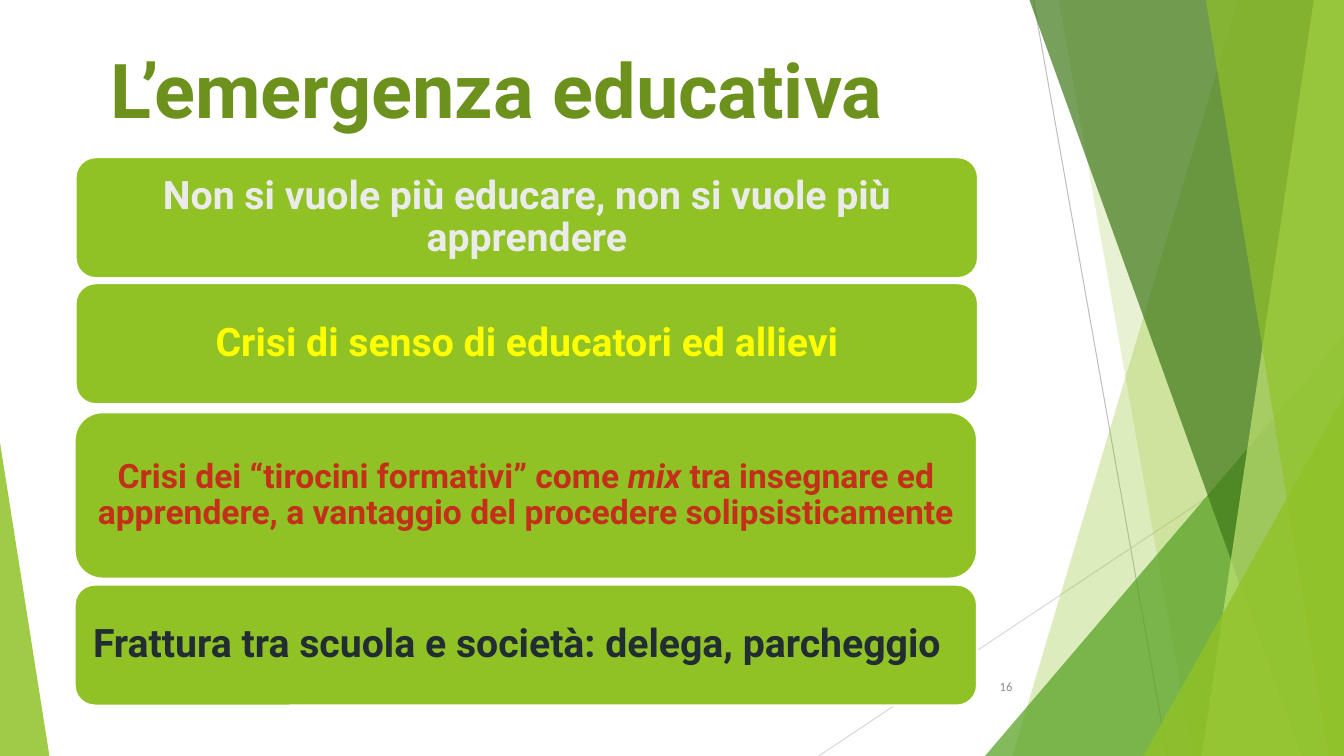
"""Build the slide "L'emergenza educativa" with faceted green decoration and four cards."""
from lxml import etree
from pptx import Presentation
from pptx.dml.color import RGBColor
from pptx.enum.shapes import MSO_CONNECTOR, MSO_SHAPE
from pptx.enum.text import MSO_ANCHOR, PP_ALIGN
from pptx.oxml.ns import qn
from pptx.util import Inches, Pt

LINE = MSO_CONNECTOR.STRAIGHT
TRIANGLE, CARD = MSO_SHAPE.ISOSCELES_TRIANGLE, MSO_SHAPE.ROUNDED_RECTANGLE
TOP, MIDDLE = MSO_ANCHOR.TOP, MSO_ANCHOR.MIDDLE
LEFT, CENTER, RIGHT = PP_ALIGN.LEFT, PP_ALIGN.CENTER, PP_ALIGN.RIGHT
W, H = 13.33, 7.5

THEME = {
    "green": "90C226", "leaf": "54A021", "forest": "3F7819", "lime": "C0E474",
    "title": "6C921D", "white": "FFFFFF", "pale": "EBEBEB", "yellow": "FFFF00",
    "red": "C42F1A", "ink": "212D32", "number": "8C8C8C",
    "rule_dark": "BFBFBF", "rule_light": "D9D9D9",
    "title_size": 54, "card_size": 28, "long_size": 24, "number_size": 9,
    "font": "Roboto", "number_font": "Calibri",
}


def paint(s, color, opacity=100):
    s.shadow.inherit = False
    s.fill.solid()
    s.fill.fore_color.rgb = RGBColor.from_string(THEME[color])
    s.line.fill.background()
    if opacity < 100:
        clr = s._element.spPr.find(qn("a:solidFill"))[0]
        etree.SubElement(clr, qn("a:alpha")).set("val", str(opacity * 1000))


def write(s, runs, color, size, font="font", bold=True, align=CENTER, anchor=MIDDLE,
          spacing=1.0, insets=(0.1, 0.05, 0.1, 0.05)):
    tf = s.text_frame
    frame = {"word_wrap": True, "vertical_anchor": anchor}
    sides = ("margin_left", "margin_top", "margin_right", "margin_bottom")
    frame.update(zip(sides, map(Inches, insets)))
    for name, value in frame.items():
        setattr(tf, name, value)
    p = tf.paragraphs[0]
    p.alignment, p.line_spacing = align, spacing
    for text, italic in runs:
        r = p.add_run()
        r.text = text
        style = {"name": THEME[font], "size": Pt(THEME[size]), "bold": bold, "italic": italic}
        for name, value in style.items():
            setattr(r.font, name, value)
        r.font.color.rgb = RGBColor.from_string(THEME[color])


prs = Presentation()
prs.slide_width, prs.slide_height = Inches(W), Inches(H)
slide = prs.slides.add_slide(prs.slide_layouts[6])
sp = slide.shapes

for x1, y1, x2, y2, color in [
    (10.25, 0, 11.58, H, "rule_dark"),
    (W, 4.03, 8.12, H, "rule_light"),
]:
    s = sp.add_connector(LINE, Inches(x1), Inches(y1), Inches(x2), Inches(y2))
    s.line.color.rgb = RGBColor.from_string(THEME[color])
    s.line.width = Pt(0.75)
    etree.SubElement(s._element.spPr, qn("a:effectLst"))

bands_and_corners = [
    ("band", 12.28, 10.04, "green", 30),
    ("band", 10.5, 11.83, "green", 20),
    ("corner", 9.77, 3.33, "leaf", 72),
    ("band", 10.21, 12.91, "forest", 70),
    ("band", 13.03, 11.92, "lime", 70),
    ("band", 11.96, 13.18, "green", 65),
    ("corner", 11.34, 3.93, "green", 80),
]
for kind, a, b, color, opacity in bands_and_corners:
    if kind == "band":
        outline = sp.build_freeform(Inches(a), Inches(0))
        edges = [(W, 0), (W, H), (b, H)]
        outline.add_line_segments([(Inches(x), Inches(y)) for x, y in edges])
        s = outline.convert_to_shape()
    else:
        s = sp.add_shape(TRIANGLE, Inches(a), Inches(b), Inches(W - a), Inches(H - b))
        s.adjustments[0] = 1
    paint(s, color, opacity)

s = sp.add_shape(TRIANGLE, Inches(0), Inches(4.39), Inches(0.49), Inches(3.11))
s.adjustments[0] = 0
paint(s, "green", 85)

s = sp.add_textbox(Inches(1), Inches(0.38), Inches(8.99), Inches(0.84))
write(s, [("L’emergenza educativa", False)], "title", "title_size", align=LEFT, anchor=TOP)

wide = (0.12, 0.06, 0.12, 0.06)
cards = [
    (0.75, 1.56, 1.2, "pale", "card_size", wide,
     [("Non si vuole più educare, non si vuole più apprendere", False)]),
    (0.75, 2.81, 1.2, "yellow", "card_size", wide,
     [("Crisi di senso di educatori ed allievi", False)]),
    (0.74, 4.09, 1.65, "red", "long_size", (0.1, 0.05, 0.1, 0.05),
     [("Crisi dei “tirocini formativi” come ", False), ("mix", True),
      (" tra insegnare ed apprendere, a vantaggio del procedere solipsisticamente", False)]),
    (0.74, 5.8, 1.2, "ink", "card_size", (0.05, 0.06, 0.23, 0.06),
     [("Frattura tra scuola e società: delega, parcheggio", False)]),
]
for left, top, height, color, size, insets, runs in cards:
    s = sp.add_shape(CARD, Inches(left), Inches(top), Inches(8.95), Inches(height))
    paint(s, "green")
    s.line.color.rgb = RGBColor.from_string(THEME["white"])
    s.line.width = Pt(1.5)
    write(s, runs, color, size, spacing=0.9, insets=insets)

s = sp.add_textbox(Inches(9.39), Inches(6.61), Inches(0.75), Inches(0.4))
write(s, [("16", False)], "number", "number_size", "number_font", bold=False, align=RIGHT)

prs.save("out.pptx")
